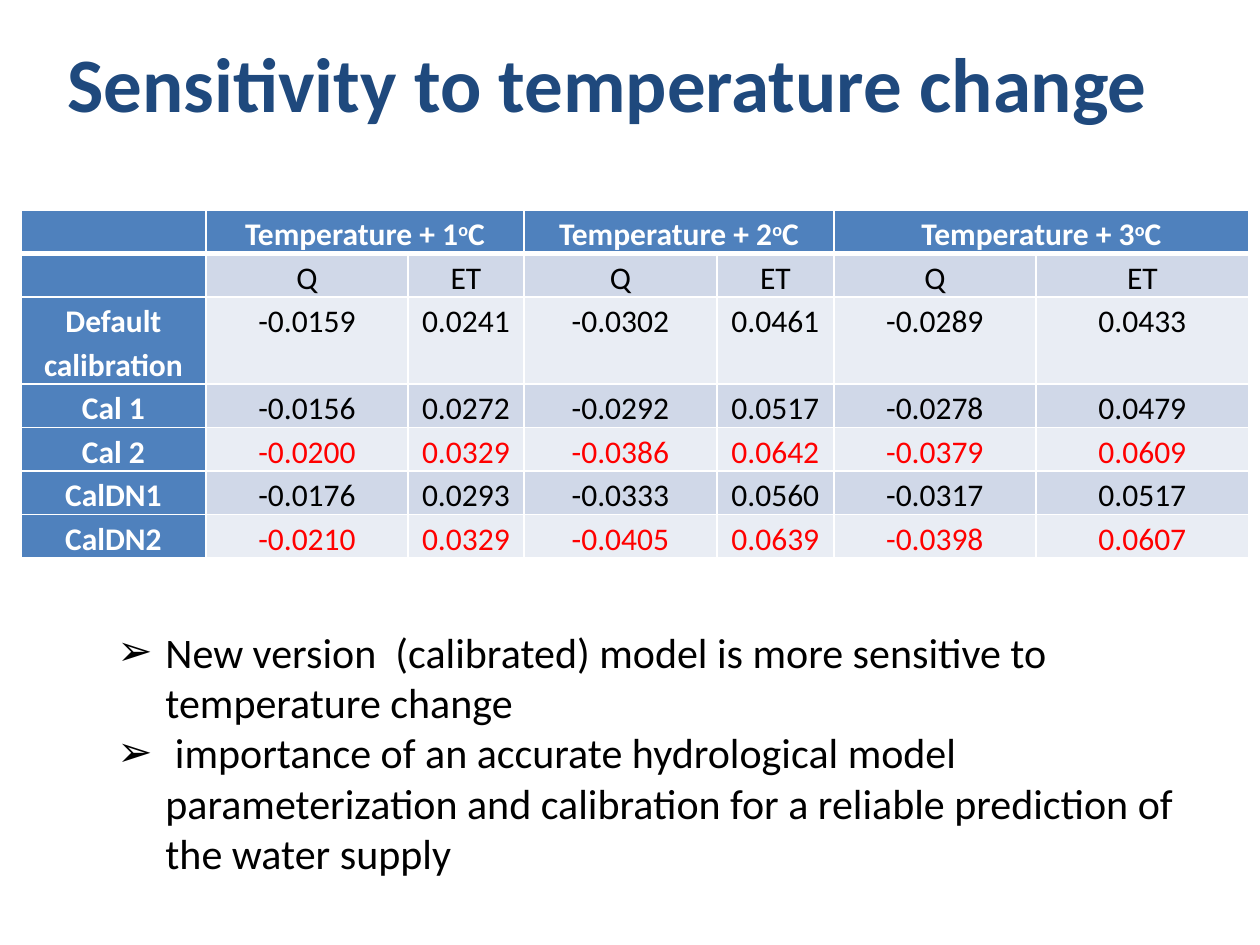
from lxml.etree import SubElement
from pptx import Presentation
from pptx.dml.color import RGBColor
from pptx.enum.text import MSO_ANCHOR, PP_ALIGN
from pptx.oxml.ns import qn
from pptx.util import Pt

SCALE = 914400 / 126
FONT = "Calibri"
WHITE, BLACK, RED = "FFFFFF", "000000", "FF0000"
NAVY, BLUE, BANDS = "1F497D", "4F81BD", ("D0D8E8", "E9EDF4")

COLUMNS = [185, 202, 116, 193, 117, 202, 213]
ROWS = [43, 43, 86, 43, 43, 43, 43]
WARMING = [1, 2, 3]
RESULTS = [
    ["", "Q", "ET", "Q", "ET", "Q", "ET"],
    ["Default calibration", "-0.0159", "0.0241", "-0.0302", "0.0461", "-0.0289", "0.0433"],
    ["Cal 1", "-0.0156", "0.0272", "-0.0292", "0.0517", "-0.0278", "0.0479"],
    ["Cal 2", "-0.0200", "0.0329", "-0.0386", "0.0642", "-0.0379", "0.0609"],
    ["CalDN1", "-0.0176", "0.0293", "-0.0333", "0.0560", "-0.0317", "0.0517"],
    ["CalDN2", "-0.0210", "0.0329", "-0.0405", "0.0639", "-0.0398", "0.0607"],
]
HIGHLIGHTED = {"Cal 2", "CalDN2"}
FINDINGS = [
    "New version  (calibrated) model is more sensitive to temperature change",
    " importance of an accurate hydrological model parameterization and "
    "calibration for a reliable prediction of the water supply",
]


def px(n):
    """Turn pixels into EMU."""
    return round(n * SCALE)


def rgb(value):
    """Turn a hex string into a colour."""
    return RGBColor.from_string(value)


def write(p, text, size=18, color=BLACK, bold=False, align=None, spacing=None, raised=False):
    """Add a formatted run to a paragraph."""
    if align is not None:
        p.alignment = align
    if spacing:
        p.line_spacing = spacing
    r = p.add_run()
    r.text = text
    r.font.name, r.font.size, r.font.bold = FONT, Pt(size), bold
    r.font.color.rgb = rgb(color)
    if raised:
        r.font._element.set("baseline", "30000")


def add_box(s, box):
    """Add a wrapping text box and return its text frame."""
    tf = s.shapes.add_textbox(*map(px, box)).text_frame
    tf.word_wrap = True
    return tf


def add_title(s, box, text):
    """Place the centred slide title."""
    tf = add_box(s, box)
    tf.vertical_anchor = MSO_ANCHOR.MIDDLE
    write(tf.paragraphs[0], text, size=44, color=NAVY, bold=True, align=PP_ALIGN.CENTER)


def style_cell(cell, fill, bottom=1):
    """Set the margins, white borders and fill of a cell."""
    cell.margin_left = cell.margin_right = px(9)
    cell.margin_top = cell.margin_bottom = 0
    tc_pr = cell._tc.get_or_add_tcPr()
    for side, width in (("L", 1), ("R", 1), ("T", 1), ("B", bottom)):
        ln = SubElement(tc_pr, qn(f"a:ln{side}"), w=str(Pt(width)))
        solid = SubElement(ln, qn("a:solidFill"))
        SubElement(solid, qn("a:srgbClr"), val=WHITE)
    cell.fill.solid()
    cell.fill.fore_color.rgb = rgb(fill)


def add_results(s, left, top):
    """Place the table of sensitivities by calibration and warming."""
    frame = s.shapes.add_table(len(ROWS), len(COLUMNS), px(left), px(top),
                               px(sum(COLUMNS)), px(sum(ROWS)))
    table = frame.table
    for column, width in zip(table.columns, COLUMNS):
        column.width = px(width)
    for row, height in zip(table.rows, ROWS):
        row.height = px(height)

    layout = {"align": PP_ALIGN.CENTER, "spacing": 1.15}
    header = {"color": WHITE, "bold": True, **layout}
    for c in range(len(COLUMNS)):
        style_cell(table.cell(0, c), BLUE, bottom=3)
    for i, degrees in enumerate(WARMING):
        cell = table.cell(0, 1 + 2 * i)
        cell.merge(table.cell(0, 2 + 2 * i))
        p = cell.text_frame.paragraphs[0]
        write(p, f"Temperature + {degrees}", **header)
        write(p, "o", raised=True, **header)
        write(p, "C", **header)

    for i, values in enumerate(RESULTS):
        body = {"color": RED if values[0] in HIGHLIGHTED else BLACK, **layout}
        for c, value in enumerate(values):
            cell = table.cell(i + 1, c)
            style_cell(cell, BANDS[i % 2] if c else BLUE)
            if value:
                write(cell.text_frame.paragraphs[0], value, **(body if c else header))


def add_findings(s, box, findings):
    """Place the arrow-bulleted findings."""
    tf = add_box(s, box)
    for i, text in enumerate(findings):
        p = tf.add_paragraph() if i else tf.paragraphs[0]
        p_pr = p._p.get_or_add_pPr()
        p_pr.set("marL", str(px(48)))
        p_pr.set("indent", str(px(-48)))
        SubElement(p_pr, qn("a:buFont"), typeface="Arial")
        SubElement(p_pr, qn("a:buChar"), char="➢")
        write(p, text, size=24)


def main():
    """Build and save the slide."""
    prs = Presentation()
    prs.slide_width, prs.slide_height = px(1260), px(945)
    s = prs.slides.add_slide(prs.slide_layouts[6])
    add_title(s, (41, 3, 1134, 157), "Sensitivity to temperature change")
    add_results(s, 21, 210)
    add_findings(s, (105, 620, 1113, 267), FINDINGS)
    prs.save("out.pptx")


if __name__ == "__main__":
    main()
